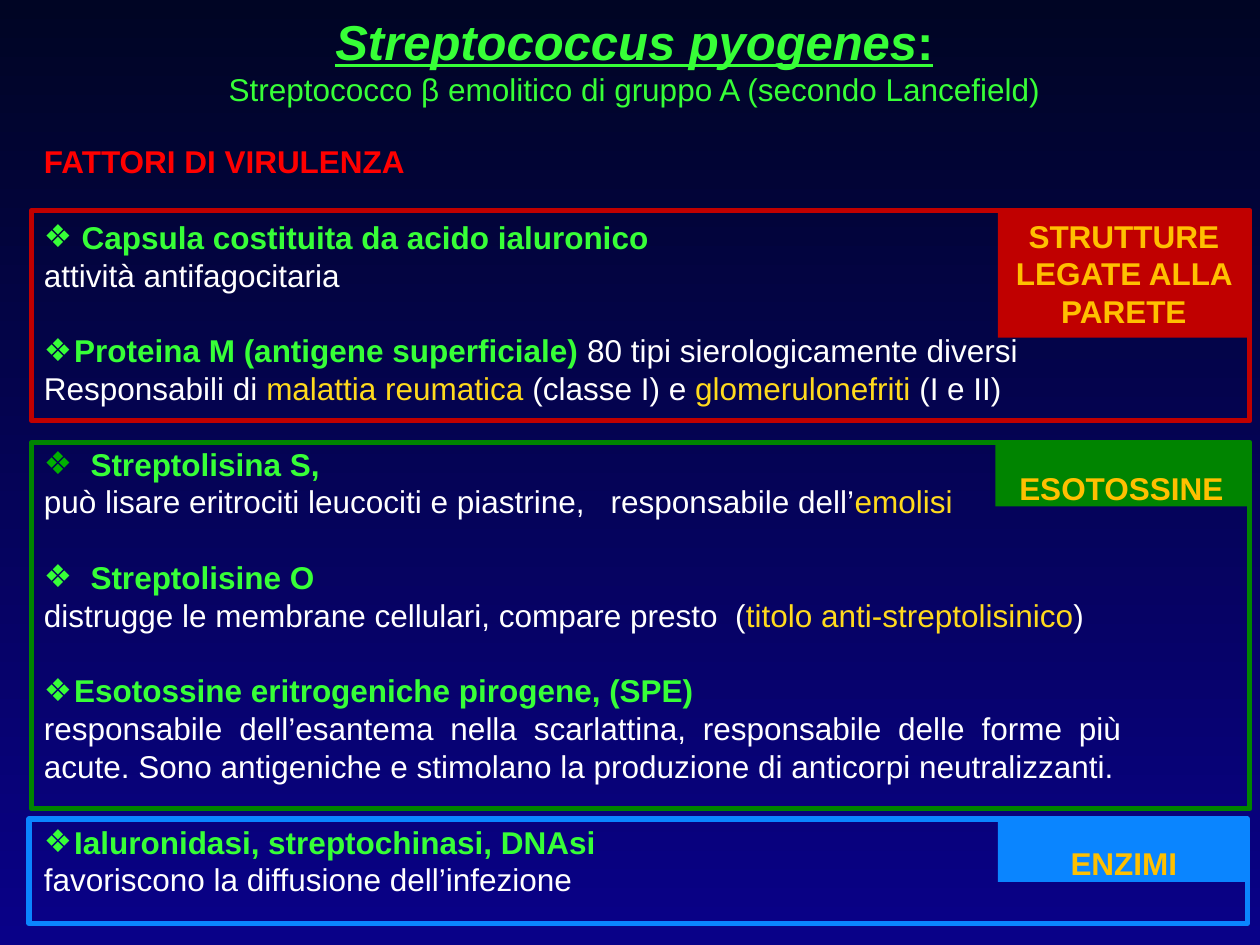
import dataclasses
import typing
import pptx
import pptx.util
import pptx.dml.color
import pptx.enum.shapes
import pptx.enum.text
import pptx.oxml
import pptx.oxml.ns

Inches = pptx.util.Inches
Pt = pptx.util.Pt
ALIGN = pptx.enum.text.PP_ALIGN
RECT = pptx.enum.shapes.MSO_SHAPE.RECTANGLE
SIZE = 18
GAP = 21.6
COLORS = {
    "top": "000524", "base": "090188", "lime": "37FF37", "leaf": "00B000",
    "alarm": "FF0000", "white": "FFFFFF", "gold": "FFDA1D", "amber": "FFC000",
    "red": "C00000", "green": "008400", "blue": "0A85FF",
}


@dataclasses.dataclass
class Run:
    text: str
    color: str = "white"
    bold: bool = False
    italic: bool = False
    under: bool = False
    size: float = SIZE


@dataclasses.dataclass
class Para:
    runs: list[Run]
    gap: bool = False
    hang: float = 0
    mark: str = "lime"


@dataclasses.dataclass
class Panel:
    color: str
    frame: tuple[float, float, float, float]
    tag: tuple[float, float, float, float]
    label: str
    lead: float


def head(text: str, hang: float, *more: Run, mark: str = "lime") -> Para:
    """Return a bulleted heading set off by a gap."""
    return Para([Run(text, "lime", True), *more], True, hang, mark)


BODY = [
    Para([Run("FATTORI DI VIRULENZA", "alarm", True)]),
    head("Capsula costituita da acido ialuronico", 0.3),
    Para([Run("attività antifagocitaria")]),
    head("Proteina M (antigene superficiale) ", 0.24,
         Run("80 tipi sierologicamente diversi")),
    Para([Run("Responsabili di "), Run("malattia reumatica ", "gold"),
          Run("(classe I) e "), Run("glomerulonefriti ", "gold"), Run("(I e II)")]),
    head("Streptolisina S,", 0.37, mark="leaf"),
    Para([Run("può lisare eritrociti leucociti e piastrine,   responsabile dell’"),
          Run("emolisi", "gold")]),
    head("Streptolisine O", 0.37),
    Para([Run("distrugge le membrane cellulari, compare presto  ("),
          Run("titolo anti-streptolisinico", "gold"), Run(")")]),
    head("Esotossine eritrogeniche pirogene, (SPE)", 0.24),
    Para([Run("responsabile dell’esantema nella scarlattina, responsabile delle "
              "forme più acute. Sono antigeniche e stimolano la produzione di "
              "anticorpi neutralizzanti.")]),
    head("Ialuronidasi, streptochinasi, DNAsi", 0.24),
    Para([Run("favoriscono la diffusione dell’infezione")]),
]
TITLE = [
    Para([Run("Streptococcus pyogenes", "lime", True, True, True, 28),
          Run(":", "lime", True, False, True, 28)]),
    Para([Run("Streptococco β emolitico di gruppo A (secondo Lancefield)", "lime")]),
]
PANELS = [
    Panel("red", (0.25, 1.67, 9.67, 1.67), (7.92, 1.67, 2, 1.01),
          "STRUTTURE LEGATE ALLA PARETE", 1),
    Panel("green", (0.25, 3.51, 9.67, 2.91), (7.9, 3.52, 2, 0.5), "ESOTOSSINE", 1.5),
    Panel("blue", (0.23, 6.5, 9.67, 0.83), (7.92, 6.5, 2, 0.5), "ENZIMI", 1.5),
]


def tint(name: str) -> pptx.dml.color.RGBColor:
    """Return the named colour."""
    return pptx.dml.color.RGBColor.from_string(COLORS[name])


def bullet(line: typing.Any, hang: float, mark: str) -> None:
    """Give a paragraph a diamond bullet and a hanging indent."""
    props = line._p.get_or_add_pPr()
    props.set("marL", str(Inches(hang)))
    props.set("indent", str(-Inches(hang)))
    space = pptx.oxml.ns.nsdecls("a")
    for part in (
        f'<a:buClr {space}><a:srgbClr val="{COLORS[mark]}"/></a:buClr>',
        f'<a:buFont {space} typeface="Arial"/>',
        f'<a:buChar {space} char="❖"/>',
    ):
        props.append(pptx.oxml.parse_xml(part))


def write(frame: typing.Any, paras: list[Para], align: typing.Any, lead: float = 1) -> None:
    """Fill a text frame run by run."""
    frame.word_wrap = True
    frame.vertical_anchor = pptx.enum.text.MSO_ANCHOR.TOP
    for i, para in enumerate(paras):
        line = frame.add_paragraph() if i else frame.paragraphs[0]
        line.alignment = align
        line.line_spacing = lead
        if para.gap:
            line.space_before = Pt(GAP)
        if para.hang:
            bullet(line, para.hang, para.mark)
        for item in para.runs:
            run = line.add_run()
            run.text = item.text
            font = run.font
            font.name, font.size = "Arial", Pt(item.size)
            font.bold, font.italic, font.underline = item.bold, item.italic, item.under
            font.color.rgb = tint(item.color)


def draw(slide: typing.Any, panel: Panel) -> None:
    """Draw a panel frame with its filled tag."""
    frame = slide.shapes.add_shape(RECT, *map(Inches, panel.frame))
    frame.shadow.inherit = False
    frame.fill.background()
    frame.line.color.rgb = tint(panel.color)
    frame.line.width = Pt(3)
    tag = slide.shapes.add_shape(RECT, *map(Inches, panel.tag))
    tag.shadow.inherit = False
    tag.fill.solid()
    tag.fill.fore_color.rgb = tint(panel.color)
    tag.line.fill.background()
    write(tag.text_frame, [Para([Run(panel.label, "amber", True)])], ALIGN.CENTER, panel.lead)


def main() -> None:
    """Build and save the slide."""
    deck = pptx.Presentation()
    deck.slide_width, deck.slide_height = Inches(10), Inches(7.5)
    slide = deck.slides.add_slide(deck.slide_layouts[6])
    fill = slide.background.fill
    fill.gradient()
    fill.gradient_angle = 270
    for stop, name, place in zip(fill.gradient_stops, ("top", "base"), (0, 1)):
        stop.color.rgb = tint(name)
        stop.position = place
    body = slide.shapes.add_textbox(*map(Inches, (0.25, 1.08, 8.75, 6.13)))
    write(body.text_frame, BODY, ALIGN.JUSTIFY)
    title = slide.shapes.add_textbox(*map(Inches, (1.41, 0.04, 7.25, 0.88)))
    write(title.text_frame, TITLE, ALIGN.CENTER)
    for panel in PANELS:
        draw(slide, panel)
    deck.save("out.pptx")


if __name__ == "__main__":
    main()
